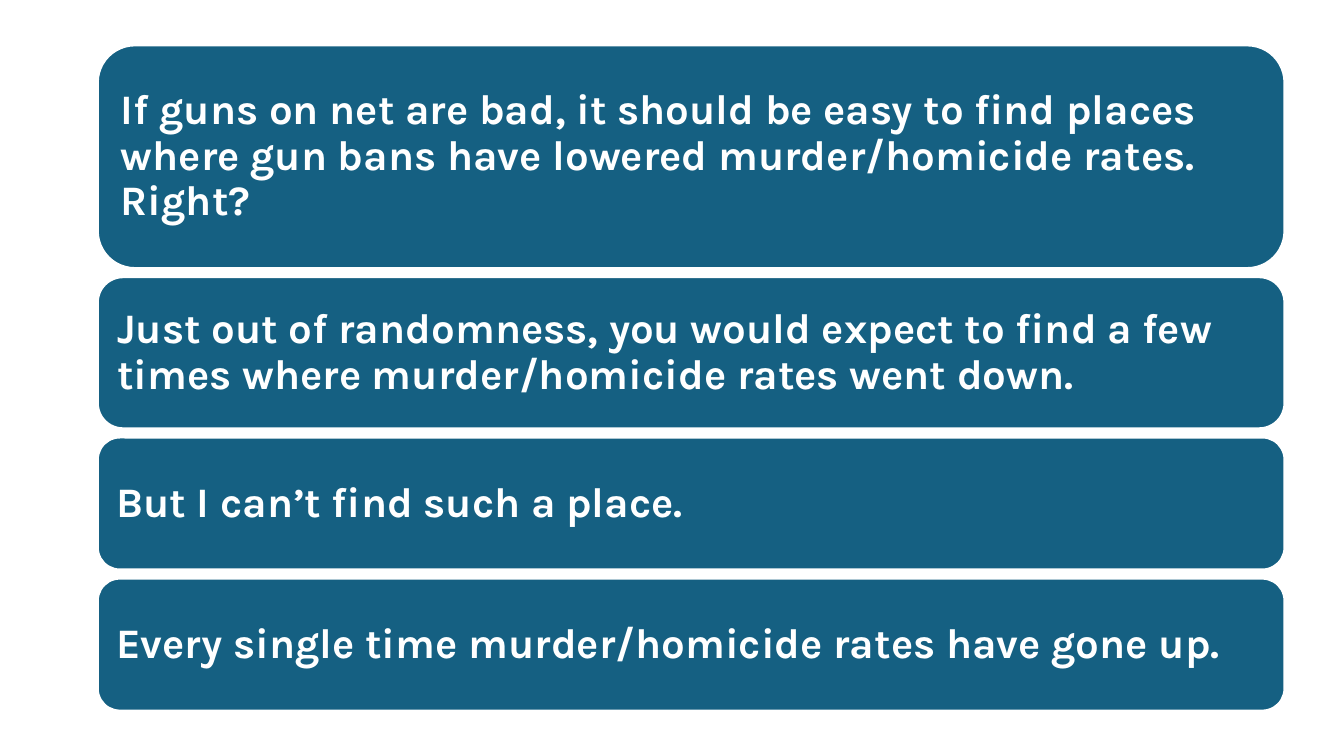
from pptx import Presentation
from pptx.dml.color import RGBColor
from pptx.enum.shapes import MSO_SHAPE as SHAPE
from pptx.enum.text import MSO_ANCHOR as ANCHOR, PP_ALIGN as ALIGN
from pptx.util import Inches, Pt


def rgb(value):
    return RGBColor.from_string(value)


class Deck:
    """Holds the style and the current slide."""
    FILL, WHITE = "156082", "FFFFFF"
    FONT = {"name": "Karla", "size": Pt(30), "bold": True}
    FRAME = {"word_wrap": True, "vertical_anchor": ANCHOR.MIDDLE}
    FRAME.update({f"margin_{side}": Inches(0.12)
                  for side in ("left", "right", "top", "bottom")})
    PARAGRAPH = {"alignment": ALIGN.LEFT, "line_spacing": 0.9}

    def __init__(self, slide):
        self.slide = slide

    @staticmethod
    def apply(target, values):
        for name, value in values.items():
            setattr(target, name, value)

    def panel(self, text, left, top, width, height):
        sp = self.slide.shapes.add_shape(
            SHAPE.ROUNDED_RECTANGLE, *map(Inches, (left, top, width, height)))
        sp.shadow.inherit = False
        sp.fill.solid()
        sp.fill.fore_color.rgb = rgb(self.FILL)
        sp.line.color.rgb = rgb(self.WHITE)
        sp.line.width = Pt(1.5)

        tf = sp.text_frame
        self.apply(tf, self.FRAME)
        p = tf.paragraphs[0]
        self.apply(p, self.PARAGRAPH)
        r = p.add_run()
        r.text = text
        self.apply(r.font, self.FONT)
        r.font.color.rgb = rgb(self.WHITE)


# Panel texts with their heights
PANELS = [
    ("If guns on net are bad, it should be easy to find places where gun bans "
     "have lowered murder/homicide rates. Right?", 2.21),
    ("Just out of randomness, you would expect to find a few times where "
     "murder/homicide rates went down.", 1.5),
    ("But I can’t find such a place.", 1.31),
    ("Every single time murder/homicide rates have gone up.", 1.31),
]
LEFT, TOP, WIDTH, GAP = 0.97, 0.45, 11.77, 0.09


def main():
    prs = Presentation()
    prs.slide_width, prs.slide_height = Inches(13.33), Inches(7.5)
    deck = Deck(prs.slides.add_slide(prs.slide_layouts[6]))

    # Stack the panels from top to bottom
    top = TOP
    for text, height in PANELS:
        deck.panel(text, LEFT, top, WIDTH, height)
        top += height + GAP

    prs.save("out.pptx")


if __name__ == "__main__":
    main()
